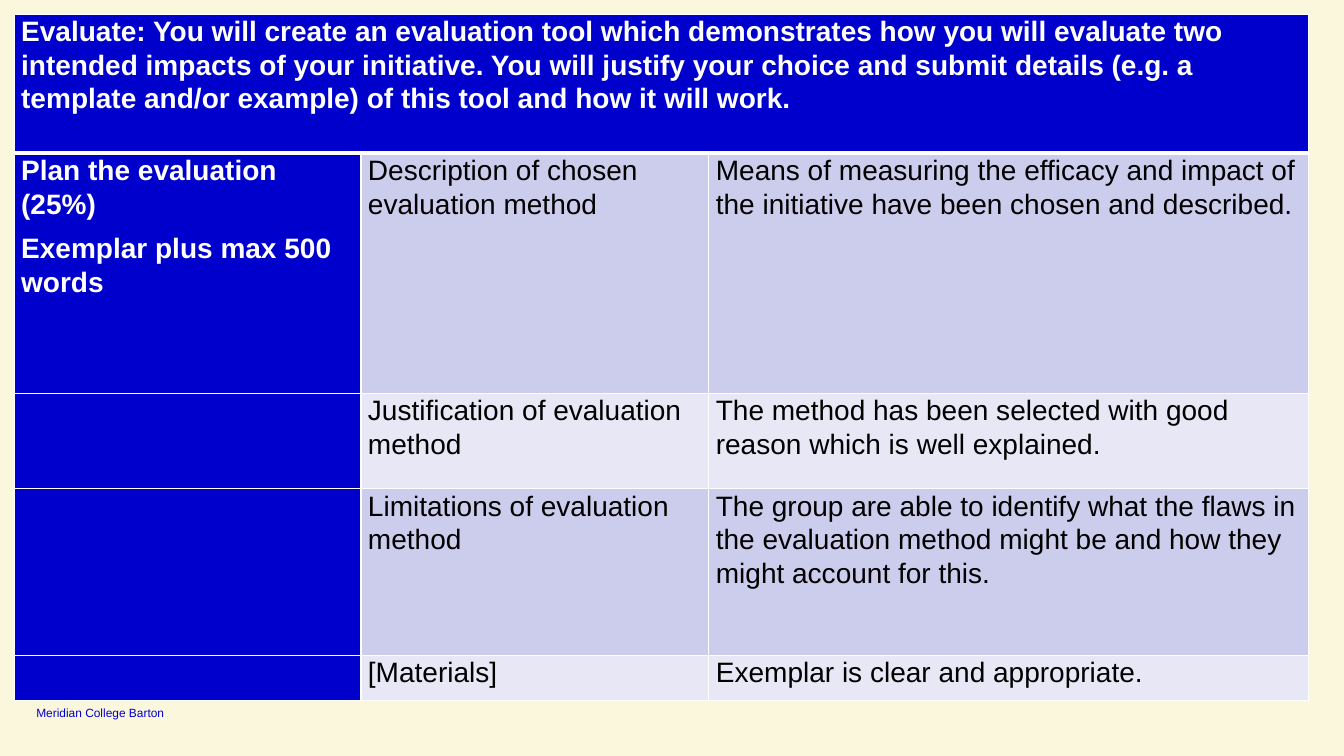
from lxml.etree import SubElement
from pptx import Presentation
from pptx.dml.color import RGBColor
from pptx.enum.text import MSO_ANCHOR
from pptx.oxml.ns import qn
from pptx.util import Inches, Pt

BLUE, WHITE, BLACK = "0000CD", "FFFFFF", "000000"
BANDS = ["CCCCED", "E7E7F6"]


def color(hex_text):
    return RGBColor.from_string(hex_text)


def add_border(cell, position, side, width):
    """Draw one white cell edge; edges come before the fill in the XML."""
    properties = cell._tc.get_or_add_tcPr()
    line = SubElement(properties, qn(f"a:ln{side}"), w=str(Pt(width)))
    fill = SubElement(line, qn("a:solidFill"))
    SubElement(fill, qn("a:srgbClr"), val=WHITE)
    properties.insert(position, line)


presentation = Presentation()
presentation.slide_width = Inches(13.33)
presentation.slide_height = Inches(7.5)
slide = presentation.slides.add_slide(presentation.slide_layouts[6])
slide.background.fill.solid()
slide.background.fill.fore_color.rgb = color("FBF7DC")

# Institution name below the table
footer = slide.shapes.add_textbox(Inches(0.36), Inches(6.99), Inches(1.55), Inches(0.15))
frame = footer.text_frame
frame.margin_left = frame.margin_right = frame.margin_top = frame.margin_bottom = 0
frame.vertical_anchor = MSO_ANCHOR.BOTTOM
paragraph = frame.paragraphs[0]
paragraph.text = "Meridian College Barton"
paragraph.font.name = "Arial"
paragraph.font.size = Pt(8.5)
paragraph.font.color.rgb = color(BLUE)

# Assessment criteria: one list of cells per row, one line per paragraph
rows = [
    ["Evaluate: You will create an evaluation tool which demonstrates how you will "
     "evaluate two intended impacts of your initiative. You will justify your choice "
     "and submit details (e.g. a template and/or example) of this tool and how it will work.",
     "", ""],
    ["Plan the evaluation (25%)\nExemplar plus max 500 words",
     "Description of chosen evaluation method",
     "Means of measuring the efficacy and impact of the initiative have been chosen and described."],
    ["", "Justification of evaluation method",
     "The method has been selected with good reason which is well explained."],
    ["", "Limitations of evaluation method",
     "The group are able to identify what the flaws in the evaluation method might be "
     "and how they might account for this."],
    ["", "[Materials]", "Exemplar is clear and appropriate."],
]
column_widths = [3.44, 3.45, 5.95]
row_heights = [1.38, 2.38, 0.95, 1.65, 0.45]

table = slide.shapes.add_table(
    len(rows), len(column_widths), Inches(0.14), Inches(0.14),
    Inches(sum(column_widths)), Inches(sum(row_heights))).table
for column, width in zip(table.columns, column_widths):
    column.width = Inches(width)
for row, height in zip(table.rows, row_heights):
    row.height = Inches(height)
table.cell(0, 0).merge(table.cell(0, 2))

for row_index, texts in enumerate(rows):
    for column_index, text in enumerate(texts):
        cell = table.cell(row_index, column_index)
        is_heading = row_index == 0 or column_index == 0
        cell.margin_left = cell.margin_right = Inches(0.07)
        cell.margin_top = cell.margin_bottom = 0
        cell.fill.solid()
        cell.fill.fore_color.rgb = color(BLUE if is_heading else BANDS[(row_index - 1) % 2])

        # Thick rule between the header row and the criteria
        widths = {"L": 1, "R": 1, "T": 3 if row_index == 1 else 1, "B": 3 if row_index == 0 else 1}
        for position, (side, width) in enumerate(widths.items()):
            add_border(cell, position, side, width)

        if not cell.is_spanned:
            cell.text = text
        for paragraph in cell.text_frame.paragraphs:
            paragraph.line_spacing = 1.07
            paragraph.space_after = Pt(8)
            paragraph.font.name = "Arial"
            paragraph.font.size = Pt(20)
            paragraph.font.bold = is_heading
            paragraph.font.color.rgb = color(WHITE if is_heading else BLACK)

presentation.save("out.pptx")
